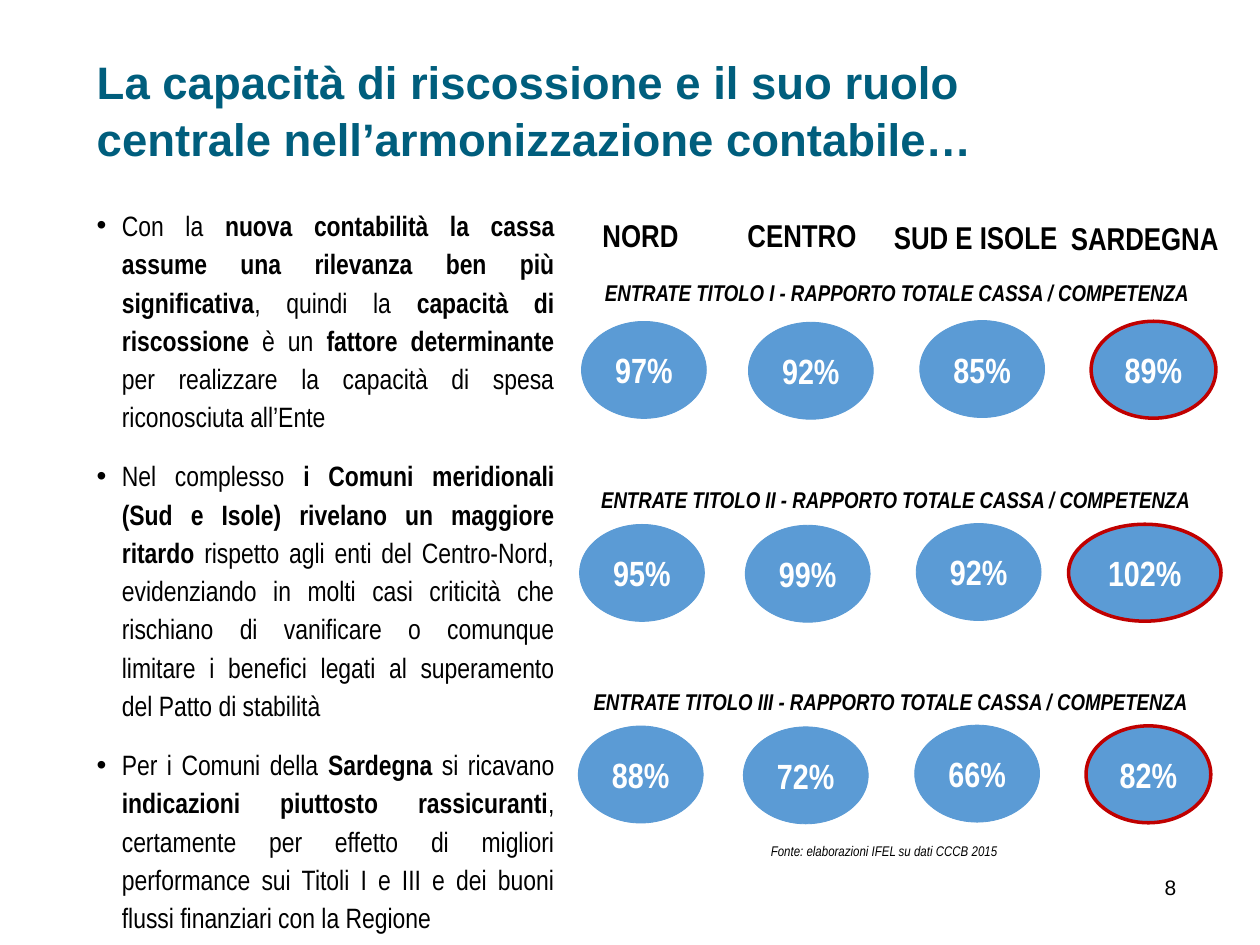
from dataclasses import dataclass

from lxml import etree
from pptx import Presentation
from pptx import util as u
from pptx.dml.color import RGBColor
from pptx.enum import shapes, text
from pptx.oxml import ns

COLORS = {"title": "005E7D", "text": "000000", "oval": "5B9BD5",
          "accent": "C00000", "value": "FFFFFF"}
NARROW = "Arial Narrow"
ALIGN = text.PP_ALIGN
OVAL_WIDTH, OVAL_HEIGHT = 71.3, 55.4
OVAL_DROPS = (0.5, 1, 0, 0.4)


@dataclass
class Label:
    words: str
    left: float
    top: float
    width: float
    height: float
    size: float
    bold: bool = False
    italic: bool = False
    color: str = "text"
    font: str = NARROW
    align: ALIGN = ALIGN.CENTER
    anchor: text.MSO_ANCHOR = text.MSO_ANCHOR.TOP
    line_spacing: float = 1.0
    wrap: bool = True


@dataclass
class Ratio:
    value: str
    left: float
    width: float = OVAL_WIDTH


@dataclass
class RatioRow:
    caption: Label
    top: float
    ratios: list[Ratio]


def caption(numeral: str, left: float, top: float, width: float) -> Label:
    words = f"ENTRATE TITOLO {numeral} - RAPPORTO TOTALE CASSA / COMPETENZA"
    return Label(words, left, top, width, 23, 13, bold=True, italic=True, wrap=False)


def heading(words: str, left: float, top: float, width: float,
            align: ALIGN = ALIGN.CENTER) -> Label:
    return Label(words, left, top, width, 28.8, 18, bold=True, align=align, wrap=False)


LABELS = [
    Label("La capacità di riscossione e il suo ruolo centrale nell’armonizzazione contabile…",
          48.2, 25.9, 574.6, 72, 26, bold=True, color="title", font="Arial",
          align=ALIGN.LEFT, anchor=text.MSO_ANCHOR.MIDDLE, line_spacing=1.05),
    Label("8", 640, 496, 57.6, 36, 12, font="Arial"),
    heading("NORD", 334, 120.2, 64),
    heading("CENTRO", 403.2, 120.2, 110.2),
    heading("SUD E ISOLE", 497.5, 121, 113.8, ALIGN.RIGHT),
    heading("SARDEGNA", 600.5, 121.7, 107.3),
    Label("Fonte: elaborazioni IFEL su dati CCCB 2015", 424, 478, 162.7, 17.3, 8,
          italic=True, wrap=False),
]

ROWS = [
    RatioRow(caption("I", 335.5, 155.5, 353.5), 183.2,
             [Ratio("97%", 332.3), Ratio("92%", 427.7),
              Ratio("85%", 525.6), Ratio("89%", 623.5)]),
    RatioRow(caption("II", 334.8, 274, 353.5), 299.2,
             [Ratio("95%", 331.2), Ratio("99%", 425.9),
              Ratio("92%", 523.6), Ratio("102%", 610.6, 87.1)]),
    RatioRow(caption("III", 330.5, 389.5, 356.4), 414.4,
             [Ratio("88%", 330.5), Ratio("72%", 424.8),
              Ratio("66%", 522.7), Ratio("82%", 620.6)]),
]

BULLETS = [
    [("Con la ", False),
     ("nuova contabilità la cassa assume una rilevanza ben più significativa", True),
     (", quindi la", False), (" capacità di riscossione", True), (" è un ", False),
     ("fattore determinante", True),
     (" per realizzare la capacità di spesa riconosciuta all’Ente", False)],
    [("Nel complesso ", False),
     ("i Comuni meridionali (Sud e Isole) rivelano un maggiore ritardo", True),
     (" rispetto agli enti del Centro-Nord, evidenziando in molti casi criticità che "
      "rischiano di vanificare o comunque limitare i benefici legati al superamento "
      "del Patto di stabilità", False)],
    [("Per i Comuni della ", False), ("Sardegna ", True), ("si ricavano ", False),
     ("indicazioni piuttosto rassicuranti", True),
     (", certamente per effetto di migliori performance sui Titoli I e III e dei buoni "
      "flussi finanziari con la Regione", False)],
]


def color(name: str) -> RGBColor:
    return RGBColor.from_string(COLORS[name])


def set_font(font, name: str, size: float, ink: str) -> None:
    font.name, font.size = name, u.Pt(size)
    font.color.rgb = color(ink)


def draw_label(page, label: Label) -> None:
    box = page.shapes.add_textbox(u.Pt(label.left), u.Pt(label.top),
                                  u.Pt(label.width), u.Pt(label.height))
    frame = box.text_frame
    frame.word_wrap = label.wrap
    frame.vertical_anchor = label.anchor
    para = frame.paragraphs[0]
    para.text = label.words
    para.alignment = label.align
    para.line_spacing = label.line_spacing
    set_font(para.font, label.font, label.size, label.color)
    para.font.bold, para.font.italic = label.bold, label.italic


def draw_bullets(page) -> None:
    box = page.shapes.add_textbox(u.Pt(48.2), u.Pt(113), u.Pt(275.8), u.Pt(429))
    frame = box.text_frame
    frame.word_wrap = True
    for index, spans in enumerate(BULLETS):
        para = frame.add_paragraph() if index else frame.paragraphs[0]
        para.alignment = ALIGN.JUSTIFY
        para.line_spacing = 1.14
        para.space_before = u.Pt(12 if index else 0)
        props = para._p.get_or_add_pPr()
        props.set("marL", str(u.Pt(14.4)))
        props.set("indent", str(-u.Pt(14.4)))
        etree.SubElement(props, ns.qn("a:buFont")).set("typeface", "Arial")
        etree.SubElement(props, ns.qn("a:buChar")).set("char", "•")
        set_font(para.font, NARROW, 16, "text")
        for words, bold in spans:
            span = para.add_run()
            span.text = words
            span.font.bold = bold


def draw_ratio(page, ratio: Ratio, top: float, accented: bool) -> None:
    oval = page.shapes.add_shape(shapes.MSO_SHAPE.OVAL, u.Pt(ratio.left), u.Pt(top),
                                 u.Pt(ratio.width), u.Pt(OVAL_HEIGHT))
    oval.shadow.inherit = False
    oval.fill.solid()
    oval.fill.fore_color.rgb = color("oval")
    oval.line.color.rgb = color("accent" if accented else "oval")
    oval.line.width = u.Pt(2 if accented else 0.5)
    frame = oval.text_frame
    frame.word_wrap = False
    frame.vertical_anchor = text.MSO_ANCHOR.MIDDLE
    para = frame.paragraphs[0]
    para.text = ratio.value
    para.alignment = ALIGN.CENTER
    set_font(para.font, NARROW, 20, "value")
    para.font.bold = True


def main() -> None:
    """Build the slide on collection capacity by area."""
    deck = Presentation()
    deck.slide_width, deck.slide_height = u.Pt(720), u.Pt(540)
    page = deck.slides.add_slide(deck.slide_layouts[6])
    for label in LABELS:
        draw_label(page, label)
    draw_bullets(page)
    for row in ROWS:
        draw_label(page, row.caption)
        for ratio, drop in zip(row.ratios, OVAL_DROPS):
            draw_ratio(page, ratio, row.top + drop, ratio is row.ratios[-1])
    deck.save("out.pptx")


if __name__ == "__main__":
    main()
